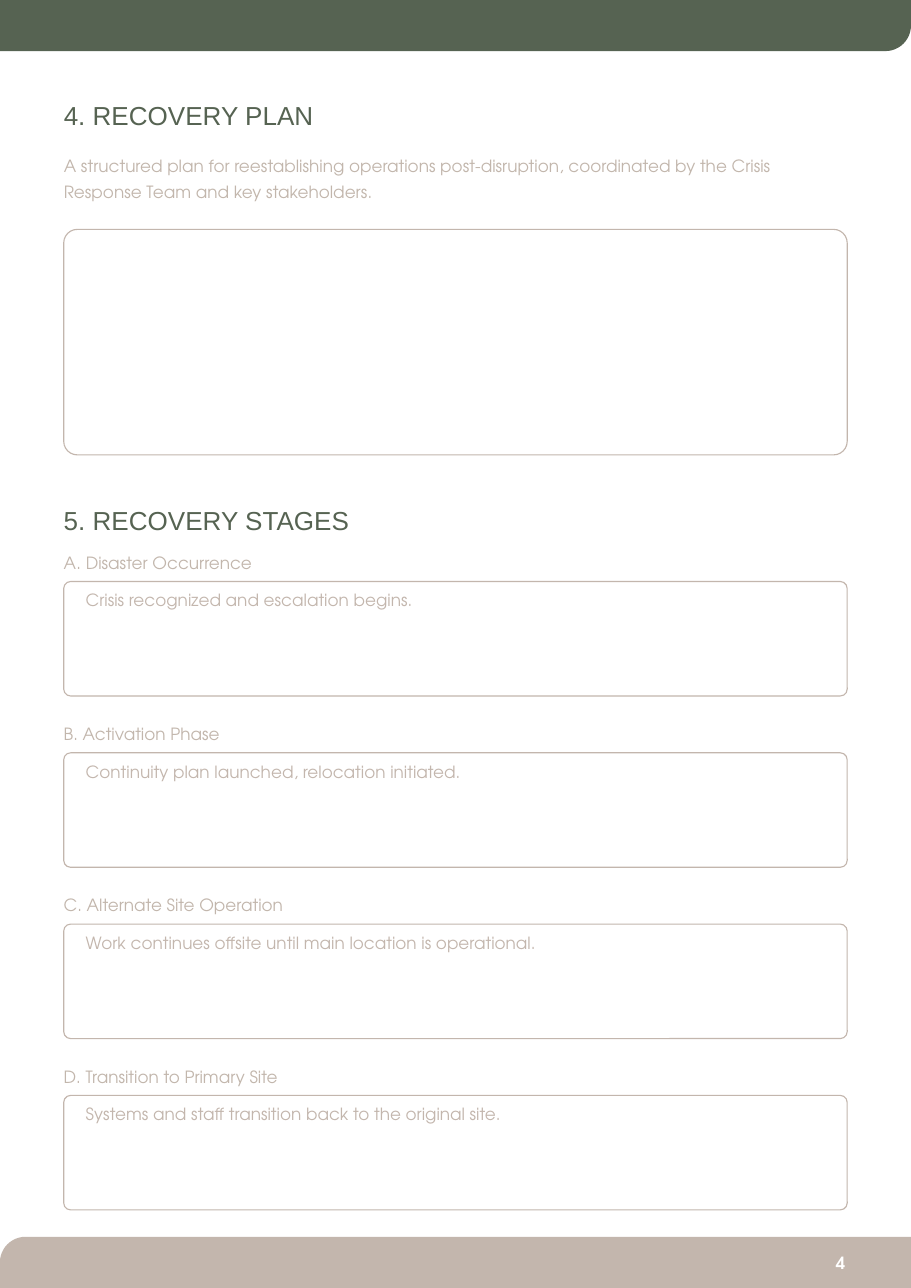
from dataclasses import dataclass

import pptx
import pptx.dml.color
import pptx.enum.shapes
import pptx.enum.text
import pptx.oxml.ns
import pptx.util

Cm = pptx.util.Cm
Pt = pptx.util.Pt
RGBColor = pptx.dml.color.RGBColor
MSO_SHAPE = pptx.enum.shapes.MSO_SHAPE
MSO_ANCHOR = pptx.enum.text.MSO_ANCHOR
PP_ALIGN = pptx.enum.text.PP_ALIGN

GREEN = RGBColor(0x56, 0x63, 0x52)
TAUPE = RGBColor(0xC3, 0xB6, 0xAD)
TEXT_TAUPE = RGBColor(0xC2, 0xB6, 0xAC)
WHITE = RGBColor(0xFF, 0xFF, 0xFF)

PAGE_W, PAGE_H = 21.0, 29.7
LEFT, CONTENT_W = 1.47, 18.06
HEADING_W, HEADING_H = 16.66, 0.74
BAR_H = 1.18
STAGE_TOP, STAGE_PITCH = 12.62, 3.95
LABEL_H, BOX_OFFSET, BOX_H = 0.48, 0.79, 2.64


@dataclass(frozen=True)
class Style:
    font: str
    size: float
    color: RGBColor
    bold: bool = False
    spacing: float = 1.0


@dataclass(frozen=True)
class Area:
    left: float
    top: float
    width: float
    height: float

    def lengths(self) -> tuple:
        return Cm(self.left), Cm(self.top), Cm(self.width), Cm(self.height)


@dataclass(frozen=True)
class Stage:
    label: str
    note: str


HEADING = Style("Arial", 17, GREEN)
BODY = Style("TeX Gyre Adventor", 11, TEXT_TAUPE, spacing=1.25)
NOTE = Style("TeX Gyre Adventor", 11, TAUPE)
PAGE_NUMBER = Style("TeX Gyre Adventor", 11, WHITE, bold=True)

STAGES = [
    Stage("A. Disaster Occurrence", "Crisis recognized and escalation begins."),
    Stage("B. Activation Phase", "Continuity plan launched, relocation initiated."),
    Stage("C. Alternate Site Operation",
          "Work continues offsite until main location is operational."),
    Stage("D. Transition to Primary Site",
          "Systems and staff transition back to the original site."),
]


def write(sp, text: str, style: Style, insets: tuple = (0, 0, 0, 0),
          anchor=MSO_ANCHOR.TOP) -> None:
    tf = sp.text_frame
    tf.word_wrap = True
    tf.auto_size = pptx.enum.text.MSO_AUTO_SIZE.NONE
    tf.vertical_anchor = anchor
    tf.margin_left, tf.margin_top, tf.margin_right, tf.margin_bottom = map(Cm, insets)
    p = tf.paragraphs[0]
    p.alignment = PP_ALIGN.LEFT
    p.line_spacing = style.spacing
    p.space_before = Pt(0)
    r = p.add_run()
    r.text = text
    r.font.name = style.font
    r.font.size = Pt(style.size)
    r.font.bold = style.bold
    r.font.color.rgb = style.color


def place(sp, area: Area) -> None:
    sp.left, sp.top, sp.width, sp.height = area.lengths()


def add_text(s, area: Area, text: str, style: Style, **options):
    sp = s.shapes.add_textbox(*area.lengths())
    write(sp, text, style, **options)
    return sp


def add_bar(s, top: float, color: RGBColor, flip: str):
    area = Area(0, top, PAGE_W, BAR_H)
    sp = s.shapes.add_shape(MSO_SHAPE.ROUND_1_RECTANGLE, *area.lengths())
    sp.adjustments[0] = 0.5
    sp.shadow.inherit = False
    sp.fill.solid()
    sp.fill.fore_color.rgb = color
    sp.line.fill.background()
    sp.element.spPr.find(pptx.oxml.ns.qn("a:xfrm")).set(flip, "1")
    return sp


def add_box(s, top: float, height: float):
    area = Area(LEFT, top, CONTENT_W, height)
    sp = s.shapes.add_shape(MSO_SHAPE.ROUNDED_RECTANGLE, *area.lengths())
    sp.adjustments[0] = 0.06
    sp.shadow.inherit = False
    sp.fill.background()
    sp.line.color.rgb = TAUPE
    sp.line.width = Pt(0.75)
    return sp


def remove_bullet(p) -> None:
    pPr = p._p.get_or_add_pPr()
    pPr.set("marL", "0")
    pPr.set("indent", "0")
    pPr.append(pptx.oxml.parse_xml(
        f'<a:buNone {pptx.oxml.ns.nsdecls("a")}/>'))


def add_stage(s, top: float, stage: Stage) -> None:
    add_text(s, Area(LEFT, top, CONTENT_W, LABEL_H), stage.label, BODY)
    sp = add_box(s, top + BOX_OFFSET, BOX_H)
    write(sp, stage.note, NOTE, insets=(0.46, 0.15, 0.25, 0.25))


def main() -> None:
    prs = pptx.Presentation()
    prs.slide_width, prs.slide_height = Cm(PAGE_W), Cm(PAGE_H)
    s = prs.slides.add_slide(prs.slide_layouts[1])

    add_bar(s, 0, GREEN, "flipV")
    add_bar(s, PAGE_H - BAR_H, TAUPE, "flipH")
    add_text(s, Area(19.02, PAGE_H - BAR_H, 0.89, BAR_H), "4", PAGE_NUMBER,
             insets=(0.25,) * 4, anchor=MSO_ANCHOR.MIDDLE)

    title, intro = s.shapes.title, s.placeholders[1]
    place(title, Area(LEFT, 2.29, HEADING_W, HEADING_H))
    write(title, "4. RECOVERY PLAN", HEADING)
    place(intro, Area(LEFT, 3.48, CONTENT_W, 1.07))
    write(intro, "A structured plan for reestablishing operations post-disruption, "
          "coordinated by the Crisis Response Team and key stakeholders.", BODY)
    remove_bullet(intro.text_frame.paragraphs[0])
    add_box(s, 5.29, 5.2)

    add_text(s, Area(LEFT, 11.63, HEADING_W, HEADING_H), "5. RECOVERY STAGES", HEADING)
    for i, stage in enumerate(STAGES):
        add_stage(s, STAGE_TOP + i * STAGE_PITCH, stage)

    prs.save("out.pptx")


if __name__ == "__main__":
    main()
